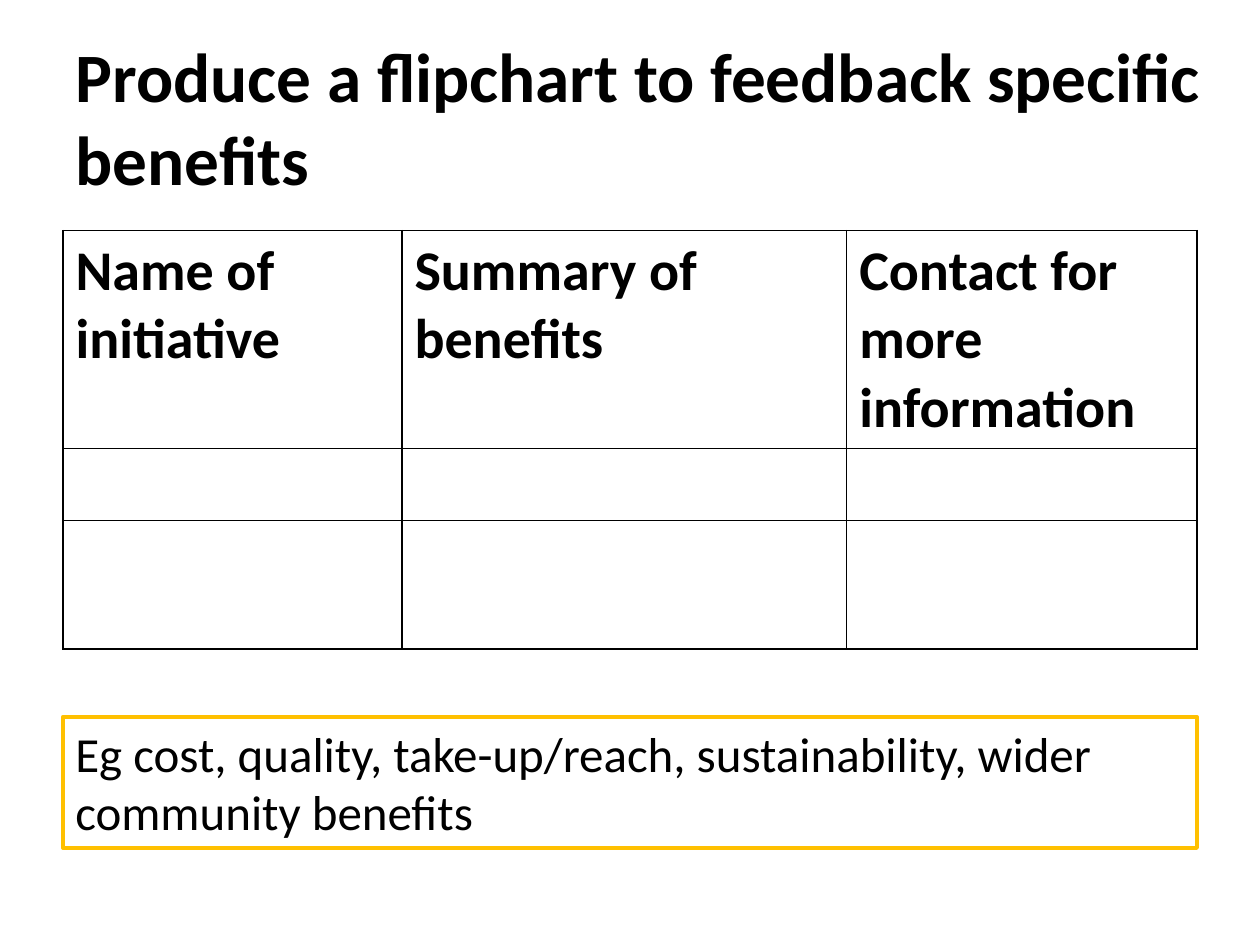
"""Build a slide with a feedback table for the benefits of initiatives."""
from dataclasses import dataclass

import lxml.etree
import pptx
import pptx.dml.color
import pptx.enum.shapes
import pptx.enum.text
import pptx.oxml.ns
import pptx.util
from pptx.util import Inches

BLACK = pptx.dml.color.RGBColor(0x00, 0x00, 0x00)
AMBER = pptx.dml.color.RGBColor(0xFF, 0xC0, 0x00)
LEFT, WIDTH = Inches(0.5), Inches(9)
ROW_HEIGHTS = (1.73, 0.57, 1.02)


@dataclass(frozen=True)
class Column:
    heading: str
    width: float


COLUMNS = (
    Column("Name of initiative", 2.69),
    Column("Summary of benefits", 3.53),
    Column("Contact for more information", 2.78),
)


def write(frame, text: str, size: float, bold: bool) -> None:
    frame.word_wrap = True
    frame.text = text
    paragraph = frame.paragraphs[0]
    paragraph.alignment = pptx.enum.text.PP_ALIGN.LEFT
    font = paragraph.runs[0].font
    formats = {"name": "Calibri", "size": pptx.util.Pt(size), "bold": bold}
    for attribute, value in formats.items():
        setattr(font, attribute, value)
    font.color.rgb = BLACK


def add_borders(cell) -> None:
    qn = pptx.oxml.ns.qn
    properties = cell._tc.get_or_add_tcPr()
    for position, side in enumerate(("lnL", "lnR", "lnT", "lnB")):
        border = lxml.etree.Element(qn(f"a:{side}"), w=str(pptx.util.Pt(1)))
        fill = lxml.etree.SubElement(border, qn("a:solidFill"))
        lxml.etree.SubElement(fill, qn("a:srgbClr"), val=str(BLACK))
        properties.insert(position, border)


def add_title(slide) -> None:
    title = slide.shapes.title
    box = {"left": LEFT, "top": Inches(0.3), "width": Inches(9.32), "height": Inches(1.25)}
    for attribute, value in box.items():
        setattr(title, attribute, value)
    write(title.text_frame, "Produce a flipchart to feedback specific benefits", 39.6, True)
    title.text_frame.auto_size = pptx.enum.text.MSO_AUTO_SIZE.NONE
    title.text_frame.vertical_anchor = pptx.enum.text.MSO_ANCHOR.MIDDLE


def add_initiatives(slide) -> None:
    initiatives = slide.shapes.add_table(
        len(ROW_HEIGHTS), len(COLUMNS), LEFT, Inches(1.83), WIDTH, Inches(sum(ROW_HEIGHTS))
    ).table
    for row, height in zip(initiatives.rows, ROW_HEIGHTS):
        row.height = Inches(height)
    for index, column in enumerate(COLUMNS):
        initiatives.columns[index].width = Inches(column.width)
        write(initiatives.cell(0, index).text_frame, column.heading, 32, True)
    for cell in initiatives.iter_cells():
        cell.fill.background()
        add_borders(cell)


def add_examples(slide) -> None:
    examples = slide.shapes.add_shape(
        pptx.enum.shapes.MSO_SHAPE.RECTANGLE, LEFT, Inches(5.69), WIDTH, Inches(1.04)
    )
    examples.shadow.inherit = False
    examples.fill.background()
    examples.line.color.rgb = AMBER
    examples.line.width = pptx.util.Pt(2.25)
    write(
        examples.text_frame,
        "Eg cost, quality, take-up/reach, sustainability, wider community benefits",
        28,
        False,
    )
    examples.text_frame.vertical_anchor = pptx.enum.text.MSO_ANCHOR.TOP
    examples.text_frame.auto_size = pptx.enum.text.MSO_AUTO_SIZE.SHAPE_TO_FIT_TEXT


def main() -> None:
    presentation = pptx.Presentation()
    presentation.slide_width = Inches(10)
    presentation.slide_height = Inches(7.5)
    slide = presentation.slides.add_slide(presentation.slide_layouts.get_by_name("Title Only"))
    add_title(slide)
    add_initiatives(slide)
    add_examples(slide)
    presentation.save("out.pptx")


if __name__ == "__main__":
    main()
